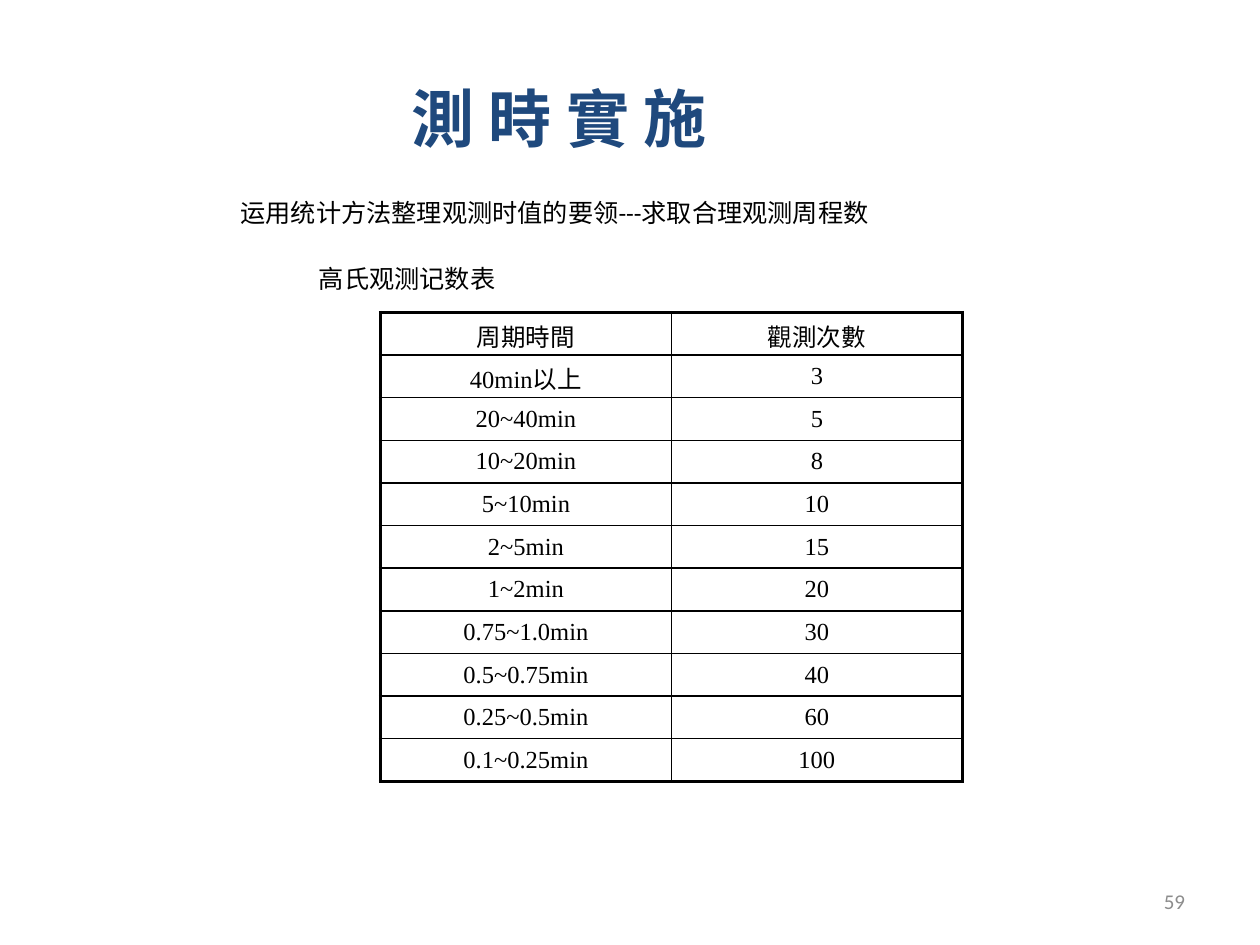
from lxml.etree import SubElement
from pptx import Presentation
from pptx.dml.color import RGBColor
from pptx.enum.text import MSO_ANCHOR, PP_ALIGN
from pptx.oxml.ns import qn
from pptx.util import Cm, Pt

COLORS = {"title": "1F497D", "text": "000000", "border": "000000", "number": "8C8C8C"}
THIN, THICK = Pt(1), Pt(2.25)
OBSERVATIONS = [
    ("周期時間", "觀測次數"),
    ("40min以上", "3"),
    ("20~40min", "5"),
    ("10~20min", "8"),
    ("5~10min", "10"),
    ("2~5min", "15"),
    ("1~2min", "20"),
    ("0.75~1.0min", "30"),
    ("0.5~0.75min", "40"),
    ("0.25~0.5min", "60"),
    ("0.1~0.25min", "100"),
]


def style(paragraph, font_name, size, color, bold=False):
    font = paragraph.font
    font.name, font.size, font.bold = font_name, Pt(size), bold
    font.color.rgb = RGBColor.from_string(COLORS[color])


def add_text_frame(slide, left, top, width, height):
    frame = slide.shapes.add_textbox(left, top, width, height).text_frame
    frame.word_wrap = True
    return frame


def add_title(slide, left, top, width, height):
    title = add_text_frame(slide, left, top, width, height).paragraphs[0]
    title.text = "測 時 實 施"
    style(title, "Noto Sans CJK TC", 36, "title", bold=True)
    for run in title.runs:
        east_asian = SubElement(run.font._element, qn("a:ea"))
        east_asian.set("typeface", "Noto Sans CJK TC")


def add_intro(slide, left, top, width, height):
    """Place the method line and, indented below it, the table caption."""
    frame = add_text_frame(slide, left, top, width, height)
    method = frame.paragraphs[0]
    method.text = "运用统计方法整理观测时值的要领---求取合理观测周程数"
    caption = frame.add_paragraph()
    caption.text = "高氏观测记数表"
    caption.space_before = Pt(20)
    caption._p.get_or_add_pPr().set("marL", str(Cm(1.58)))
    for paragraph in (method, caption):
        style(paragraph, "Calibri", 14.4, "text")


def set_borders(cell, widths):
    """Draw the cell's edges; widths maps each edge tag to a line width."""
    properties = cell._tc.get_or_add_tcPr()
    for position, (edge, width) in enumerate(widths.items()):
        line = properties.makeelement(qn(f"a:{edge}"), {"w": str(width)})
        fill = SubElement(line, qn("a:solidFill"))
        SubElement(fill, qn("a:srgbClr")).set("val", COLORS["border"])
        properties.insert(position, line)


def add_observation_table(slide, left, top, width, height):
    rows, columns = len(OBSERVATIONS), len(OBSERVATIONS[0])
    table = slide.shapes.add_table(rows, columns, left, top, width, height).table
    table.first_row = table.horz_banding = False
    for r, entries in enumerate(OBSERVATIONS):
        for c, entry in enumerate(entries):
            cell = table.cell(r, c)
            cell.fill.background()
            cell.vertical_anchor = MSO_ANCHOR.MIDDLE
            cell.margin_left = cell.margin_right = Cm(0.18)
            cell.margin_top = cell.margin_bottom = Cm(0.1)
            paragraph = cell.text_frame.paragraphs[0]
            paragraph.text = entry
            paragraph.alignment = PP_ALIGN.CENTER
            style(paragraph, "Times New Roman", 14, "text")
            set_borders(cell, {
                "lnL": THICK if c == 0 else THIN,
                "lnR": THICK if c == columns - 1 else THIN,
                "lnT": THICK if r == 0 else THIN,
                "lnB": THICK if r == rows - 1 else THIN,
            })


def add_slide_number(slide, left, top, width, height):
    frame = add_text_frame(slide, left, top, width, height)
    frame.vertical_anchor = MSO_ANCHOR.MIDDLE
    number = frame.paragraphs[0]
    number.text = "59"
    number.alignment = PP_ALIGN.RIGHT
    style(number, "Calibri", 12, "number")


def main():
    presentation = Presentation()
    presentation.slide_width, presentation.slide_height = Cm(25.4), Cm(19.05)
    slide = presentation.slides.add_slide(presentation.slide_layouts[6])
    add_intro(slide, Cm(4.6), Cm(3.86), Cm(17.2), Cm(2.3))
    add_observation_table(slide, Cm(7.67), Cm(6.3), Cm(11.73), Cm(9.45))
    add_title(slide, Cm(8.05), Cm(1.47), Cm(7.82), Cm(1.78))
    add_slide_number(slide, Cm(18.21), Cm(17.65), Cm(5.93), Cm(1.02))
    presentation.save("out.pptx")


if __name__ == "__main__":
    main()
